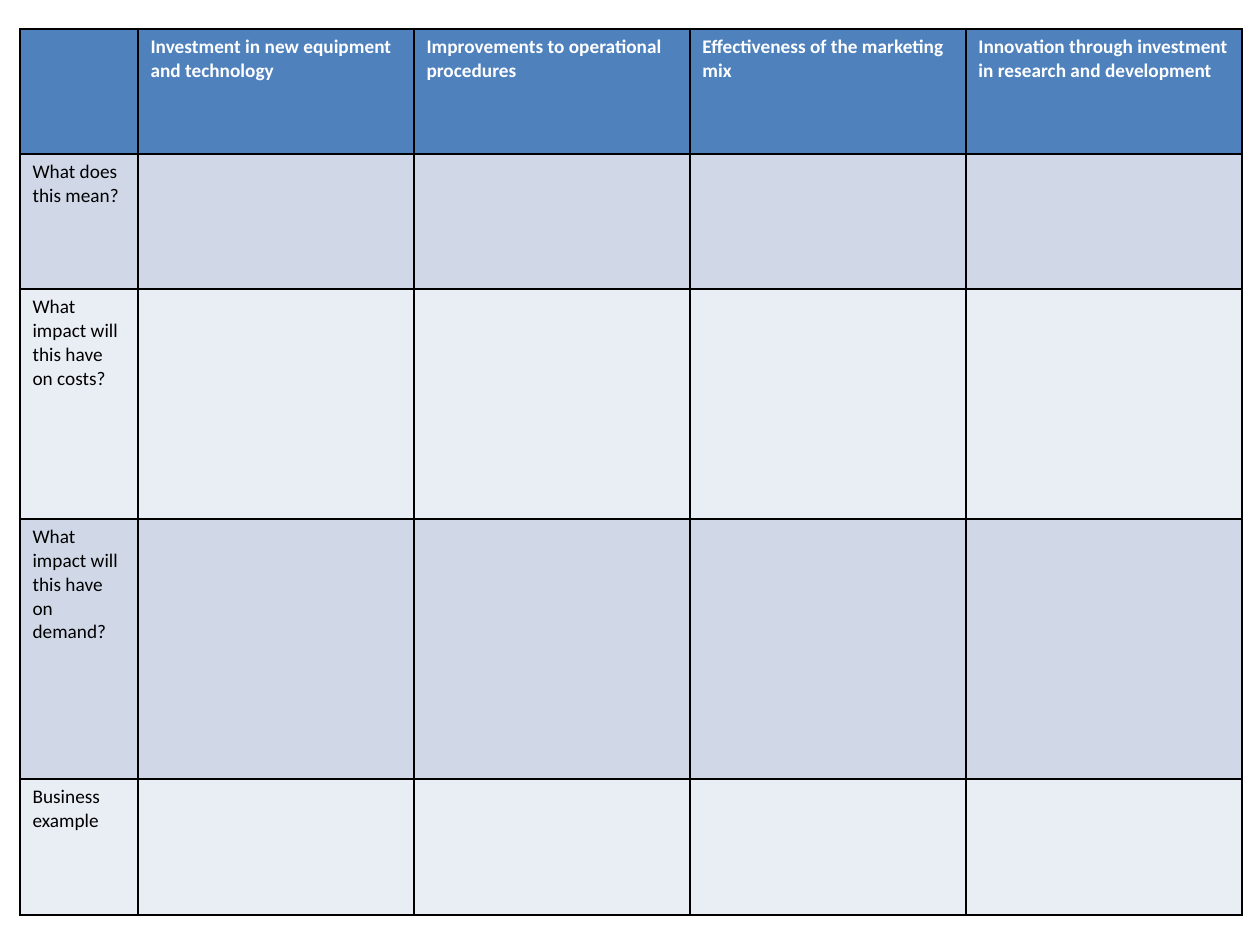
from lxml.etree import SubElement
from pptx import Presentation
from pptx.dml.color import RGBColor
from pptx.oxml.ns import qn
from pptx.util import Emu, Pt

INK = {
    "head": "4F81BD",
    "dark": "D0D8E8",
    "light": "E9EDF4",
    "line": "000000",
    "text": "000000",
    "title": "FFFFFF",
}
HEADS = [
    "Investment in new equipment and technology",
    "Improvements to operational procedures",
    "Effectiveness of the marketing mix",
    "Innovation through investment in research and development",
]
ASKS = [
    "What does this mean?",
    "What impact will this have on costs?",
    "What impact will this have on demand?",
    "Business example",
]
COLS = [118] + [276] * 4
ROWS = [125, 135, 230, 260, 136]


def px(n):
    return Emu(round(n * 914400 / 126))


class Deck:
    font = "Calibri"
    size = Pt(11)
    edge = Pt(1)

    def __init__(self, wide, high):
        self.prs = Presentation()
        self.prs.slide_width = px(wide)
        self.prs.slide_height = px(high)
        self.slide = self.prs.slides.add_slide(self.prs.slide_layouts[6])

    def border(self, cell):
        props = cell._tc.get_or_add_tcPr()
        for side in ("lnL", "lnR", "lnT", "lnB"):
            line = SubElement(props, qn(f"a:{side}"), w=str(self.edge))
            fill = SubElement(line, qn("a:solidFill"))
            SubElement(fill, qn("a:srgbClr"), val=INK["line"])

    def cell(self, cell, text, fill, ink, bold):
        self.border(cell)
        cell.fill.solid()
        cell.fill.fore_color.rgb = RGBColor.from_string(INK[fill])
        cell.text = text
        font = cell.text_frame.paragraphs[0].font
        font.name, font.size, font.bold = self.font, self.size, bold
        font.color.rgb = RGBColor.from_string(INK[ink])

    def table(self, left, top, cols, rows, texts):
        grid = self.slide.shapes.add_table(
            len(rows), len(cols), px(left), px(top), px(sum(cols)), px(sum(rows))
        ).table
        for col, wide in zip(grid.columns, cols):
            col.width = px(wide)
        for i, (row, high) in enumerate(zip(grid.rows, rows)):
            row.height = px(high)
            head = i == 0
            fill = "head" if head else "dark" if i % 2 else "light"
            ink = "title" if head else "text"
            for cell, text in zip(row.cells, texts[i]):
                self.cell(cell, text, fill, ink, head)


def main():
    deck = Deck(1260, 945)
    texts = [["", *HEADS]] + [[ask] + [""] * len(HEADS) for ask in ASKS]
    deck.table(20, 29, COLS, ROWS, texts)
    deck.prs.save("out.pptx")


if __name__ == "__main__":
    main()
